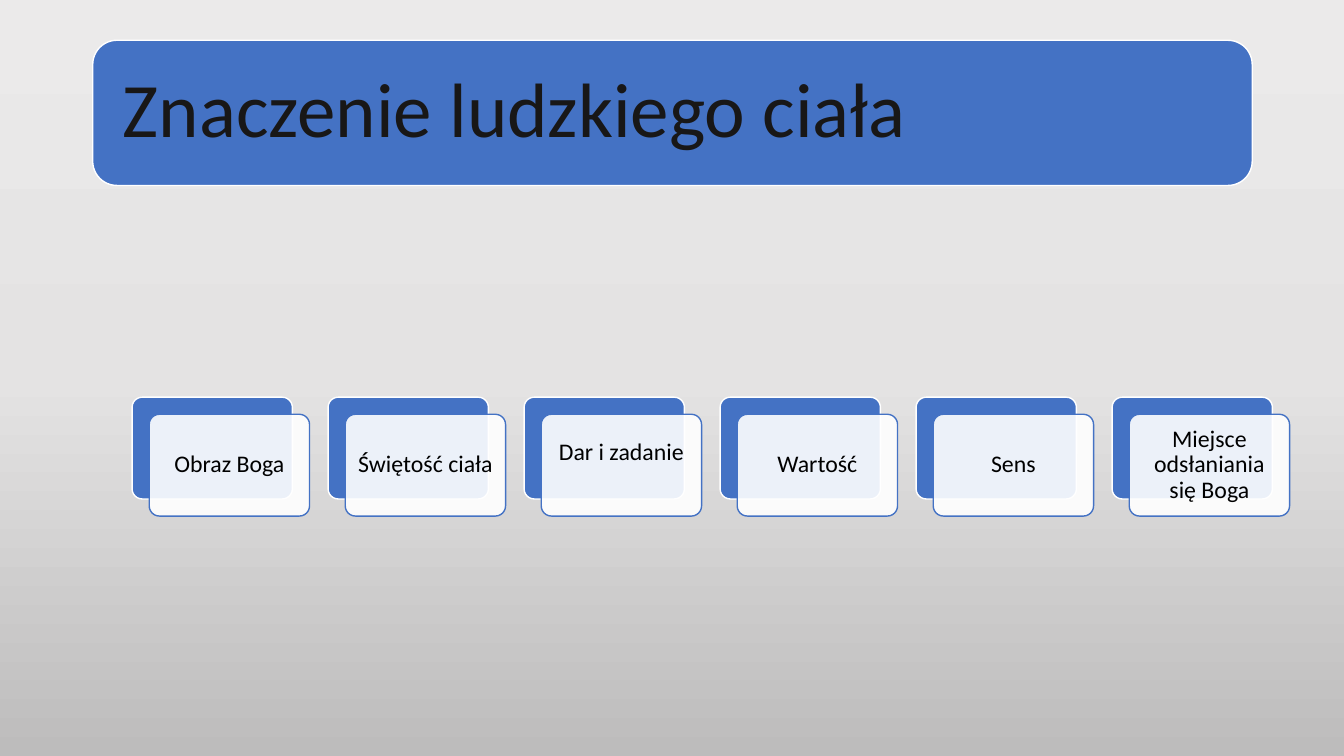
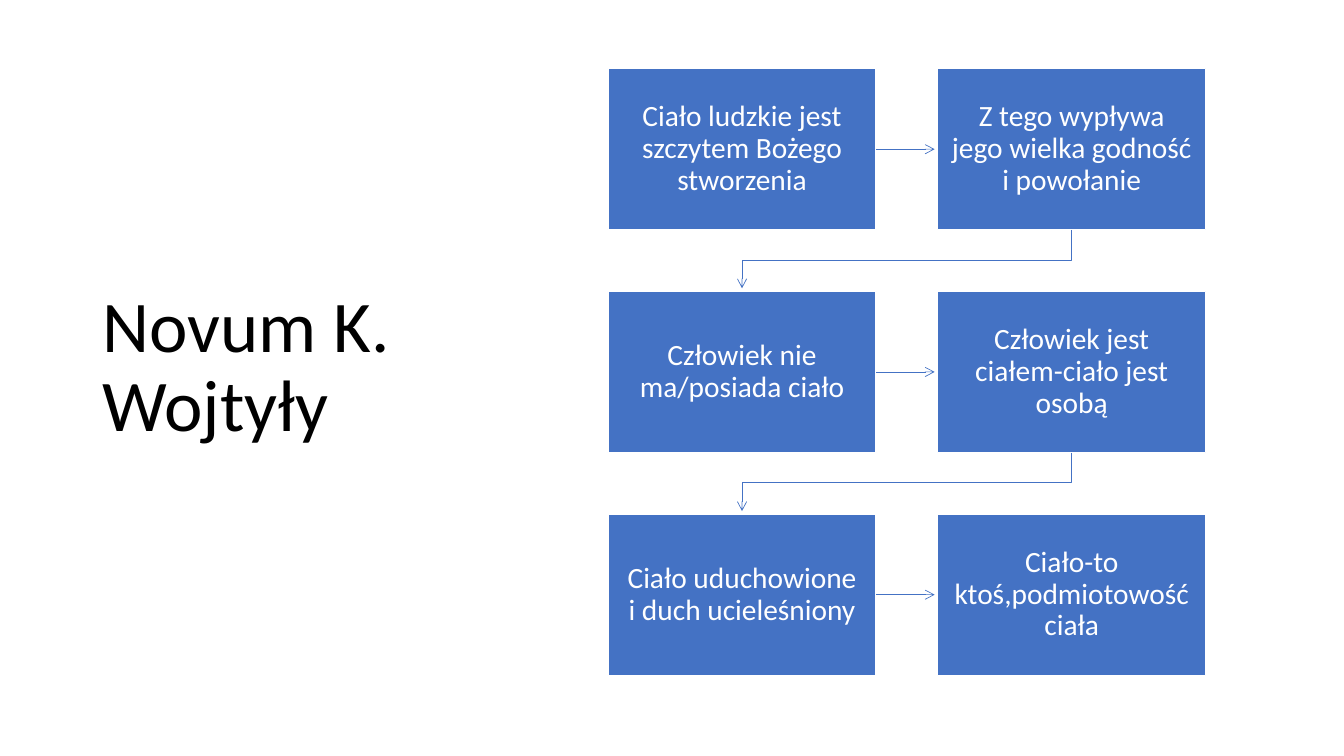
import pptx
import pptx.dml.color
import pptx.enum.shapes
import pptx.enum.text
import pptx.oxml.ns
import pptx.util
import copy
import lxml.etree

Inches = pptx.util.Inches
Shapes = pptx.enum.shapes.MSO_SHAPE
Align = pptx.enum.text.PP_ALIGN

FONT = "Calibri"
BLUE = "4472C4"
WHITE = "FFFFFF"
BLACK = "000000"
TITLE_DARK = "181717"
BACKDROP = [(0, "EBEAEA"), (0.5, "E4E3E3"), (1, "BDBCBC")]

MEANINGS = [
    "Obraz Boga",
    "Świętość ciała",
    "Dar i zadanie",
    "Wartość",
    "Sens",
    "Miejsce odsłaniania się Boga",
]
RAISED_MEANING = "Dar i zadanie"
STEPS = [
    "Ciało ludzkie jest szczytem Bożego stworzenia",
    "Z tego wypływa jego wielka godność i powołanie",
    "Człowiek nie ma/posiada ciało",
    "Człowiek jest ciałem-ciało jest osobą",
    "Ciało uduchowione i duch ucieleśniony",
    "Ciało-to ktoś,podmiotowość ciała",
]


def rgb(value):
    """Turn a hex string into a colour."""
    return pptx.dml.color.RGBColor.from_string(value)


def add_xml(parent, tag, **attributes):
    """Append a DrawingML element to a parent element."""
    return lxml.etree.SubElement(parent, pptx.oxml.ns.qn(tag), **attributes)


def write(shape, text, size, color, align=Align.CENTER, insets=(0.1, 0.05, 0.1, 0.05)):
    """Write one vertically centred paragraph into a shape."""
    frame = shape.text_frame
    frame.word_wrap = True
    frame.vertical_anchor = pptx.enum.text.MSO_ANCHOR.MIDDLE
    sides = [Inches(inset) for inset in insets]
    frame.margin_left, frame.margin_top, frame.margin_right, frame.margin_bottom = sides
    paragraph = frame.paragraphs[0]
    paragraph.alignment = align
    paragraph.line_spacing = 0.9
    run = paragraph.add_run()
    run.text = text
    run.font.name = FONT
    run.font.size = pptx.util.Pt(size)
    run.font.color.rgb = rgb(color)


def add_panel(slide, kind, left, top, width, height, fill=BLUE, line=WHITE, opacity=None, corner=None):
    """Add a filled, outlined shape without a shadow."""
    shape = slide.shapes.add_shape(kind, Inches(left), Inches(top), Inches(width), Inches(height))
    shape.shadow.inherit = False
    shape.fill.solid()
    shape.fill.fore_color.rgb = rgb(fill)
    if opacity is not None:
        color = shape.element.spPr.xpath("./a:solidFill/a:srgbClr")[0]
        add_xml(color, "a:alpha", val=str(opacity * 1000))
    shape.line.color.rgb = rgb(line)
    shape.line.width = pptx.util.Pt(1)
    if corner is not None:
        shape.adjustments[0] = corner
    return shape


def style_arrow(shape):
    """Give a line its colour, weight and open arrowhead."""
    shape.line.color.rgb = rgb(BLUE)
    shape.line.width = pptx.util.Pt(0.5)
    add_xml(shape.element.spPr.xpath("./a:ln")[0], "a:tailEnd", type="arrow")
    add_xml(shape.element.spPr, "a:effectLst")


def add_straight_arrow(slide, start, end, y):
    """Add a horizontal arrow."""
    kind = pptx.enum.shapes.MSO_CONNECTOR.STRAIGHT
    style_arrow(slide.shapes.add_connector(kind, Inches(start), Inches(y), Inches(end), Inches(y)))


def add_return_arrow(slide, start, end, top, bend, bottom):
    """Add an arrow that runs down, across and down to the next row."""
    builder = slide.shapes.build_freeform(Inches(start), Inches(top))
    corners = [(start, bend), (end, bend), (end, bottom)]
    builder.add_line_segments([(Inches(x), Inches(y)) for x, y in corners], close=False)
    shape = builder.convert_to_shape()
    shape.fill.background()
    style_arrow(shape)


def paint_gradient(slide, stops):
    """Fill the slide background with a gradient from top to bottom."""
    fill = slide.background.fill
    fill.gradient()
    fill.gradient_angle = 270
    stop_list = slide.element.xpath(".//p:bg//a:gsLst")[0]
    while len(stop_list) < len(stops):
        stop_list.append(copy.deepcopy(stop_list[0]))
    for stop, (position, color) in zip(fill.gradient_stops, stops):
        stop.position = position
        stop.color.rgb = rgb(color)


def add_card(slide, text, left, top, width, height):
    """Add a blue card with a translucent label card in front of it."""
    offset = 0.17
    add_panel(slide, Shapes.ROUNDED_RECTANGLE, left, top, width, height, corner=0.1)
    label = add_panel(slide, Shapes.ROUNDED_RECTANGLE, left + offset, top + offset, width, height,
                      fill=WHITE, line=BLUE, opacity=90, corner=0.1)
    bottom = 0.31 if text == RAISED_MEANING else 0.07
    write(label, text, 17, BLACK, insets=(0.07, 0.07, 0.07, bottom))


def add_card_row(slide, texts, left, top, width, height):
    """Spread cards evenly over a row."""
    card_width = 1.59
    pitch = (width - card_width) / (len(texts) - 1)
    for index, text in enumerate(texts):
        add_card(slide, text, left + index * pitch, top, card_width, height)


def add_step_flow(slide, texts, left, top, width, height):
    """Lay steps out in two columns, joined by arrows in reading order."""
    columns, box_width, box_height, clearance = 2, 2.66, 1.6, 0.03
    rows = len(texts) // columns
    column_pitch = width - box_width
    row_pitch = (height - box_height) / (rows - 1)
    for index, text in enumerate(texts):
        row, column = divmod(index, columns)
        x = left + column * column_pitch
        y = top + row * row_pitch
        box = add_panel(slide, Shapes.RECTANGLE, x, y, box_width, box_height)
        write(box, text, 21, WHITE, insets=(0.13, 0.14, 0.13, 0.14))
        if column == 0:
            add_straight_arrow(slide, x + box_width, x + column_pitch - clearance, y + box_height / 2)
        elif row < rows - 1:
            bottom = y + box_height
            add_return_arrow(slide, x + box_width / 2, left + box_width / 2,
                             bottom, bottom + 0.3, y + row_pitch - clearance)


def build_meaning_slide(slide):
    """Build the slide with a title band and a row of cards."""
    paint_gradient(slide, BACKDROP)
    band = add_panel(slide, Shapes.ROUNDED_RECTANGLE, 0.92, 0.4, 11.5, 1.44)
    write(band, "Znaczenie ludzkiego ciała", 55, TITLE_DARK, align=Align.LEFT, insets=(0.23,) * 4)
    add_card_row(slide, MEANINGS, 1.31, 3.94, 11.31, 1.01)


def build_novum_slide(slide):
    """Build the slide with a side title and a flow of steps."""
    title = slide.shapes.add_textbox(Inches(0.92), Inches(0.61), Inches(3.69), Inches(6.09))
    write(title, "Novum K. Wojtyły", 52, BLACK, align=Align.LEFT)
    add_step_flow(slide, STEPS, 6.03, 0.68, 5.93, 6.02)


def main():
    """Build and save the presentation."""
    presentation = pptx.Presentation()
    presentation.slide_width = Inches(13.33)
    presentation.slide_height = Inches(7.5)
    blank = presentation.slide_layouts[6]
    for build in (build_meaning_slide, build_novum_slide):
        build(presentation.slides.add_slide(blank))
    presentation.save("out.pptx")


if __name__ == "__main__":
    main()
